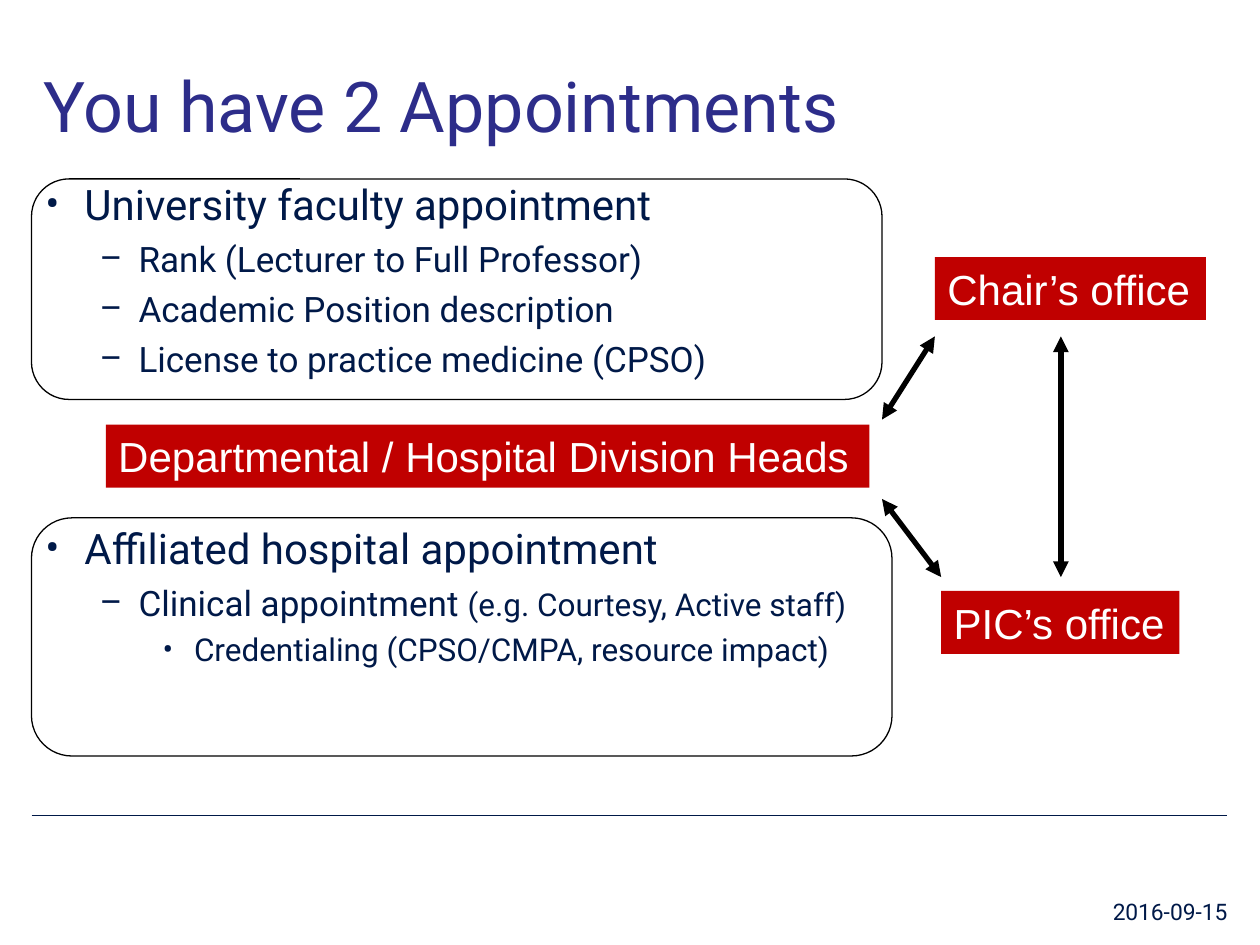
from dataclasses import dataclass

from lxml import etree
from pptx import Presentation
from pptx import util as u
from pptx.dml.color import RGBColor
from pptx.enum import shapes, text
from pptx.oxml.ns import qn


@dataclass(frozen=True)
class Theme:
    title_color: RGBColor = RGBColor(0x2D, 0x2D, 0x8A)
    body_color: RGBColor = RGBColor(0x00, 0x19, 0x48)
    office_fill: RGBColor = RGBColor(0xC0, 0x00, 0x00)
    office_color: RGBColor = RGBColor(0xFF, 0xFF, 0xFF)
    outline: RGBColor = RGBColor(0, 0, 0)
    body_font: str = "Roboto"
    office_font: str = "Arial"
    title_size: float = 40
    heading_size: float = 24
    item_size: float = 20
    detail_size: float = 18
    date_size: float = 13
    thin: float = 0.75
    thick: float = 3


THEME = Theme()
LEVELS = [(0.38, -0.31, "•"), (0.81, -0.31, "–"), (1.25, -0.25, "•")]
SPACE_SHARE = 0.23
LEFT = 0.25

UNIVERSITY = [
    (0, [("University faculty appointment", THEME.heading_size)]),
    (1, [("Rank (Lecturer to Full Professor)", THEME.item_size)]),
    (1, [("Academic Position description", THEME.item_size)]),
    (1, [("License to practice medicine (CPSO)", THEME.item_size)]),
]
HOSPITAL = [
    (0, [("Affiliated hospital appointment", THEME.heading_size)]),
    (1, [("Clinical appointment ", THEME.item_size),
         ("(e.g. Courtesy, Active staff)", THEME.detail_size)]),
    (2, [("Credentialing (CPSO/CMPA, resource impact)", THEME.detail_size)]),
]
OFFICES = [
    ("Chair’s office", (7.42, 2.04, 2.15, 0.5)),
    ("PIC’s office", (7.47, 4.69, 1.89, 0.5)),
    ("Departmental / Hospital Division Heads", (0.84, 3.37, 6.06, 0.5)),
]
ARROWS = [(7, 3.33, 7.42, 2.67), (7, 3.96, 7.47, 4.58), (8.42, 2.67, 8.42, 4.58)]
PANELS = [(LEFT, 1.42, 6.75, 1.75), (LEFT, 4.11, 6.83, 1.89)]


def inches(values):
    return [u.Inches(value) for value in values]


def apply_format(target, values):
    for name, value in values.items():
        setattr(target, name, value)


def add_span(para, words, size, color, font):
    span = para.add_run()
    span.text = words
    apply_format(span.font, {"size": u.Pt(size), "name": font})
    span.font.color.rgb = color


def add_text_box(page, place, side=0.04, anchor=text.MSO_ANCHOR.TOP):
    frame = page.shapes.add_textbox(*inches(place)).text_frame
    apply_format(frame, {
        "word_wrap": True, "vertical_anchor": anchor,
        "margin_left": u.Inches(side), "margin_right": u.Inches(side),
        "margin_top": 0, "margin_bottom": 0,
    })
    return frame


def add_title(page, words):
    para = add_text_box(page, (LEFT, 0.5, 9.5, 0.92), 0.1).paragraphs[0]
    add_span(para, words, THEME.title_size, THEME.title_color, THEME.body_font)


def add_date(page, words):
    frame = add_text_box(page, (7.66, 6.91, 2.08, 0.43), 0, text.MSO_ANCHOR.BOTTOM)
    para = frame.paragraphs[0]
    para.alignment = text.PP_ALIGN.RIGHT
    add_span(para, words, THEME.date_size, THEME.body_color, THEME.body_font)


def set_bullet(para, level):
    margin, indent, mark = LEVELS[level]
    properties = para._p.get_or_add_pPr()
    properties.set("marL", str(u.Inches(margin)))
    properties.set("indent", str(u.Inches(indent)))
    etree.SubElement(properties, qn("a:buFont")).set("typeface", THEME.body_font)
    etree.SubElement(properties, qn("a:buChar")).set("char", mark)


def add_outline(page, place, items):
    frame = add_text_box(page, place)
    for index, (level, spans) in enumerate(items):
        para = frame.add_paragraph() if index else frame.paragraphs[0]
        para.level = level
        set_bullet(para, level)
        if index:
            para.space_before = u.Pt(round(spans[0][1] * SPACE_SHARE, 1))
        for words, size in spans:
            add_span(para, words, size, THEME.body_color, THEME.body_font)


def add_office(page, words, place):
    box = page.shapes.add_shape(shapes.MSO_SHAPE.RECTANGLE, *inches(place))
    box.shadow.inherit = False
    box.fill.solid()
    box.fill.fore_color.rgb = THEME.office_fill
    box.line.fill.background()
    apply_format(box.text_frame, {
        "word_wrap": False,
        "auto_size": text.MSO_AUTO_SIZE.SHAPE_TO_FIT_TEXT,
        "vertical_anchor": text.MSO_ANCHOR.TOP,
    })
    para = box.text_frame.paragraphs[0]
    para.alignment = text.PP_ALIGN.LEFT
    add_span(para, words, THEME.heading_size, THEME.office_color, THEME.office_font)


def add_panel(page, place):
    box = page.shapes.add_shape(shapes.MSO_SHAPE.ROUNDED_RECTANGLE, *inches(place))
    box.shadow.inherit = False
    box.adjustments[0] = 0.17
    box.fill.background()
    box.line.color.rgb = THEME.outline
    box.line.width = u.Pt(THEME.thin)


def add_line(page, ends, color, width):
    line = page.shapes.add_connector(shapes.MSO_CONNECTOR.STRAIGHT, *inches(ends))
    line.line.color.rgb = color
    line.line.width = u.Pt(width)
    etree.SubElement(line._element.spPr, qn("a:effectLst"))
    return line


def add_double_arrow(page, ends):
    arrow = add_line(page, ends, THEME.outline, THEME.thick)
    stroke = arrow.line._get_or_add_ln()
    for tip in ("a:headEnd", "a:tailEnd"):
        etree.SubElement(stroke, qn(tip)).set("type", "triangle")


def main():
    deck = Presentation()
    apply_format(deck, {"slide_width": u.Inches(10), "slide_height": u.Inches(7.5)})
    page = deck.slides.add_slide(deck.slide_layouts[6])
    add_line(page, (LEFT, 6.47, 9.74, 6.47), THEME.body_color, THEME.thin)
    add_title(page, "You have 2 Appointments")
    add_outline(page, (LEFT, 1.42, 8, 1.75), UNIVERSITY)
    add_outline(page, (LEFT, 4.15, 8, 1.85), HOSPITAL)
    add_date(page, "2016-09-15")
    for words, place in OFFICES:
        add_office(page, words, place)
    for ends in ARROWS:
        add_double_arrow(page, ends)
    for place in PANELS:
        add_panel(page, place)
    deck.save("out.pptx")


if __name__ == "__main__":
    main()
